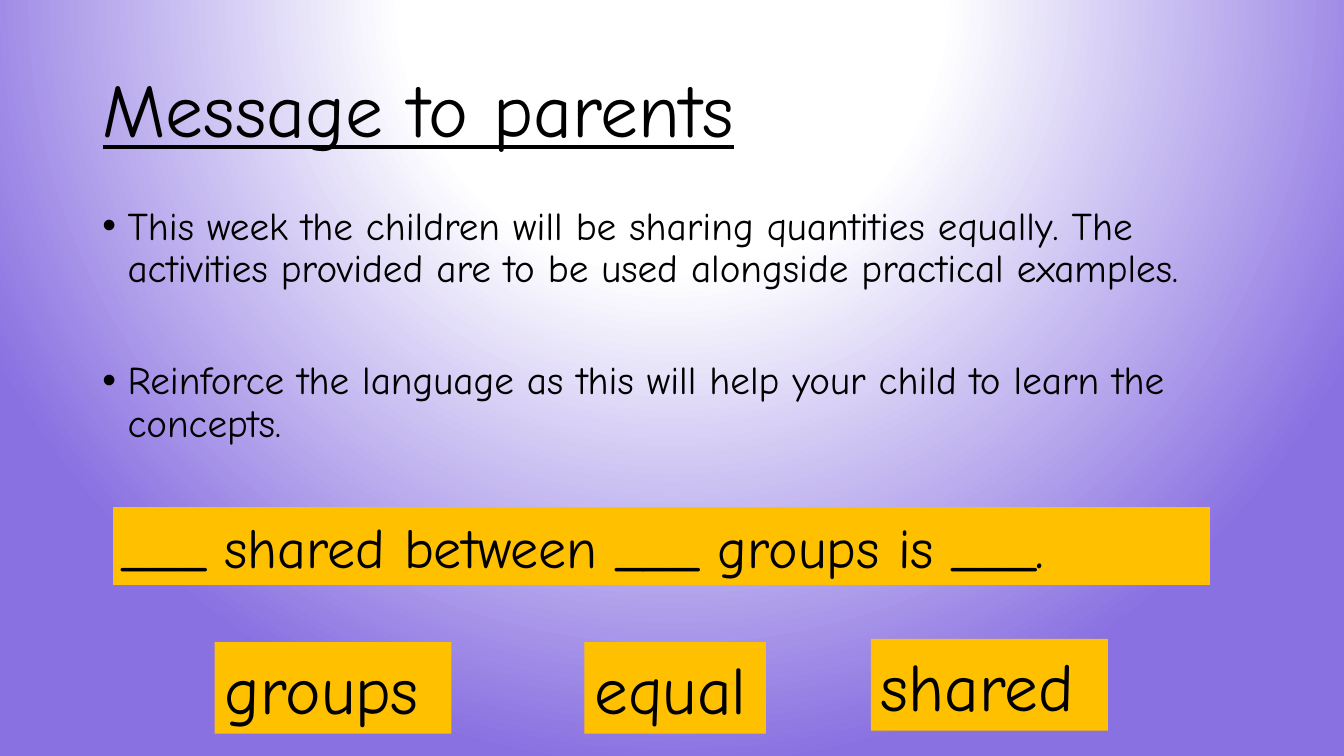
from dataclasses import dataclass

from pptx import Presentation
from pptx.dml.color import RGBColor
from pptx.enum.text import MSO_ANCHOR, PP_ALIGN
from pptx.oxml import parse_xml
from pptx.oxml.ns import nsdecls
from pptx.util import Cm, Pt


@dataclass(frozen=True)
class Theme:
    """Colours, font and type sizes of the slide."""
    font: str = "Comic Neue"
    ink: str = "000000"
    card: str = "FFC000"
    glow: str = "FFFFFF"
    edge: str = "8971E1"
    title: int = 54
    body: int = 28
    sentence: int = 40
    word: int = 48


THEME = Theme()


def style(p, size, underline=None):
    """Format the runs of a left-aligned paragraph."""
    p.alignment = PP_ALIGN.LEFT
    for r in p.runs:
        r.font.name = THEME.font
        r.font.size = Pt(size)
        r.font.underline = underline
        r.font.color.rgb = RGBColor.from_string(THEME.ink)


def add_background(s):
    """Fill the background with a circular glow from above the slide."""
    stops = ((0, THEME.glow), (35, THEME.glow), (100, THEME.edge))
    gs = "".join(
        f'<a:gs pos="{pos * 1000}"><a:srgbClr val="{color}"/></a:gs>'
        for pos, color in stops
    )
    s.background.fill.solid()
    bg = s._element.xpath("p:cSld/p:bg/p:bgPr")[0]
    bg.replace(bg[0], parse_xml(
        f'<a:gradFill {nsdecls("a")} rotWithShape="1"><a:gsLst>{gs}</a:gsLst>'
        '<a:path path="circle"><a:fillToRect l="50000" t="-80000" '
        'r="50000" b="180000"/></a:path></a:gradFill>'
    ))


def add_title(s, box, text):
    """Place the underlined title in its placeholder."""
    sp = s.shapes.title
    sp.left, sp.top, sp.width, sp.height = map(Cm, box)
    tf = sp.text_frame
    tf.text = text
    tf.vertical_anchor = MSO_ANCHOR.MIDDLE
    p = tf.paragraphs[0]
    p.line_spacing = 0.9
    style(p, THEME.title, underline=True)


def add_bullets(s, box, items):
    """Place widely spaced bullet points."""
    tf = s.shapes.add_textbox(*map(Cm, box)).text_frame
    tf.word_wrap = True
    for i, text in enumerate(items):
        p = tf.add_paragraph() if i else tf.paragraphs[0]
        p.text = text
        p.line_spacing = 0.9
        p.space_before = Pt(50 if i else 10)
        style(p, THEME.body)
        pPr = p._p.get_or_add_pPr()
        pPr.set("marL", str(Cm(0.635)))
        pPr.set("indent", str(-Cm(0.635)))
        for xml in ('<a:buFont {} typeface="Arial"/>', '<a:buChar {} char="•"/>'):
            pPr.append(parse_xml(xml.format(nsdecls("a"))))


def add_card(s, box, text, size):
    """Place a filled card with one line of text."""
    sp = s.shapes.add_textbox(*map(Cm, box))
    sp.fill.solid()
    sp.fill.fore_color.rgb = RGBColor.from_string(THEME.card)
    tf = sp.text_frame
    tf.text = text
    tf.word_wrap = True
    style(tf.paragraphs[0], size)


def add_message_slide(prs):
    """Build the message with its sentence frame and key words."""
    s = prs.slides.add_slide(prs.slide_layouts[5])
    add_background(s)
    add_title(s, (2.33, 1.01, 29.21, 3.68), "Message to parents")
    add_bullets(s, (2.33, 5.07, 29.21, 8.26), (
        "This week the children will be sharing quantities equally. "
        "The activities provided are to be used alongside practical examples.",
        "Reinforce the language as this will help your child to learn the concepts.",
    ))
    add_card(s, (2.85, 12.78, 27.64, 1.96),
             "___ shared between ___ groups is ___.", THEME.sentence)
    words = (("groups", 5.41, 16.18, 5.97),
             ("equal", 14.73, 16.18, 4.57),
             ("shared", 21.95, 16.1, 5.97))
    for text, left, top, width in words:
        add_card(s, (left, top, width, 2.31), text, THEME.word)


def main():
    """Create and save the presentation."""
    prs = Presentation()
    prs.slide_width, prs.slide_height = Cm(33.87), Cm(19.05)
    add_message_slide(prs)
    prs.save("out.pptx")


if __name__ == "__main__":
    main()
